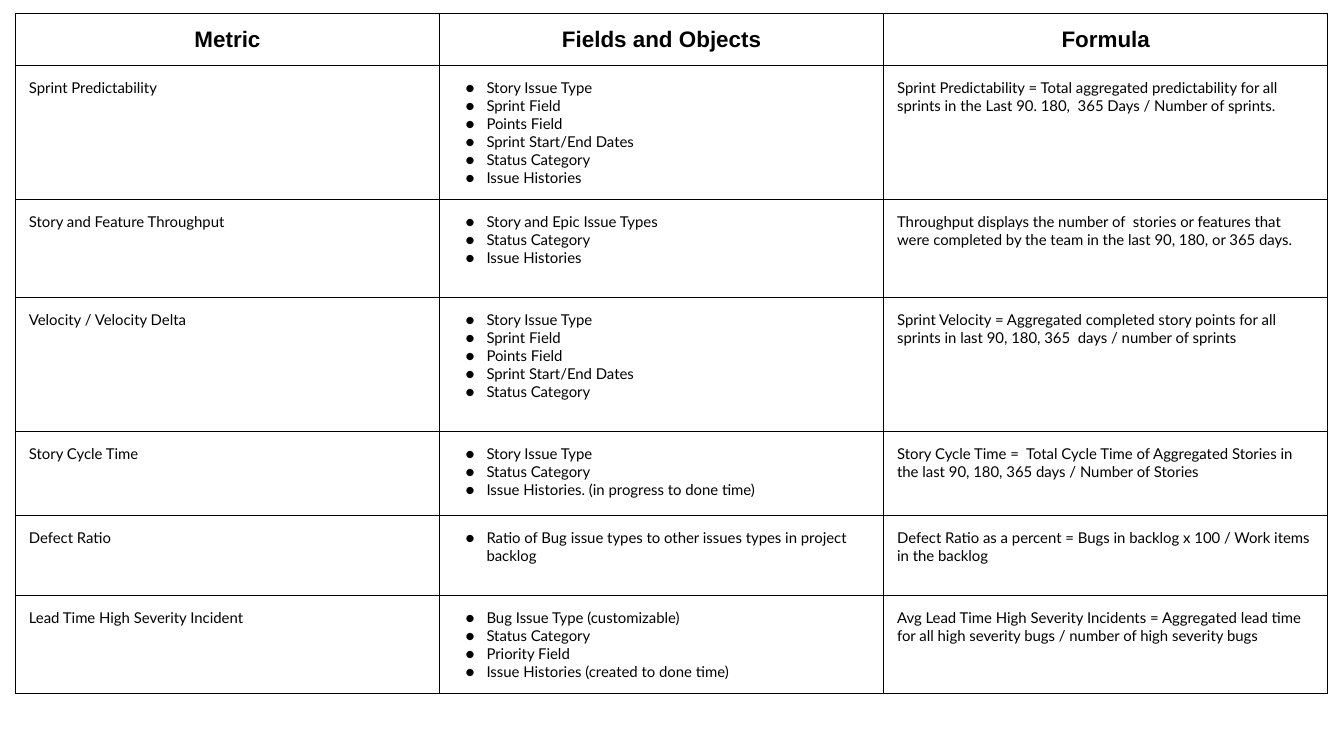
from pptx import Presentation
from pptx.dml.color import RGBColor
from pptx.enum.text import PP_ALIGN
from pptx.oxml.ns import qn
from pptx.util import Inches, Pt
from lxml import etree

CENTER, LEFT = PP_ALIGN.CENTER, PP_ALIGN.LEFT
BLACK, WHITE = "000000", "FFFFFF"
HEADER_FORMAT = {"name": "Arial", "size": Pt(24), "bold": True}
BODY_FORMAT = {"name": "Lato", "size": Pt(16), "bold": False}
MARGINS = ("margin_left", "margin_right", "margin_top", "margin_bottom")
BORDERS = ("a:lnL", "a:lnR", "a:lnT", "a:lnB")

COLUMN_WIDTHS = (6.31, 6.61, 6.61)
ROW_HEIGHTS = (0.78, 1.99, 1.46, 1.99, 1.25, 1.19, 1.46)
FIELDS_COLUMN = 1

# Each line of a cell in the fields column becomes a bullet.
ROWS = [
    ("Metric", "Fields and Objects", "Formula"),
    ("Sprint Predictability",
     "Story Issue Type\nSprint Field\nPoints Field\nSprint Start/End Dates\n"
     "Status Category\nIssue Histories",
     "Sprint Predictability = Total aggregated predictability for all sprints "
     "in the Last 90. 180,  365 Days / Number of sprints."),
    ("Story and Feature Throughput",
     "Story and Epic Issue Types\nStatus Category\nIssue Histories",
     "Throughput displays the number of  stories or features that were "
     "completed by the team in the last 90, 180, or 365 days."),
    ("Velocity / Velocity Delta",
     "Story Issue Type\nSprint Field\nPoints Field\nSprint Start/End Dates\n"
     "Status Category",
     "Sprint Velocity = Aggregated completed story points for all sprints "
     "in last 90, 180, 365  days / number of sprints"),
    ("Story Cycle Time",
     "Story Issue Type\nStatus Category\n"
     "Issue Histories. (in progress to done time)",
     "Story Cycle Time =  Total Cycle Time of Aggregated Stories in the last "
     "90, 180, 365 days / Number of Stories"),
    ("Defect Ratio",
     "Ratio of Bug issue types to other issues types in project backlog",
     "Defect Ratio as a percent = Bugs in backlog x 100 / Work items in the "
     "backlog"),
    ("Lead Time High Severity Incident",
     "Bug Issue Type (customizable)\nStatus Category\nPriority Field\n"
     "Issue Histories (created to done time)",
     "Avg Lead Time High Severity Incidents = Aggregated lead time for all "
     "high severity bugs / number of high severity bugs"),
]


def color(value):
    return RGBColor.from_string(value)


def add_solid_fill(parent, value):
    fill = etree.SubElement(parent, qn("a:solidFill"))
    etree.SubElement(fill, qn("a:srgbClr"), val=value)


deck = Presentation()
deck.slide_width, deck.slide_height = Inches(20), Inches(11.25)
page = deck.slides.add_slide(deck.slide_layouts[6])

table = page.shapes.add_table(
    len(ROWS), len(COLUMN_WIDTHS), Inches(0.23), Inches(0.2),
    Inches(sum(COLUMN_WIDTHS)), Inches(sum(ROW_HEIGHTS))).table
table.horz_banding = False
for column, width in zip(table.columns, COLUMN_WIDTHS):
    column.width = Inches(width)
for row, height in zip(table.rows, ROW_HEIGHTS):
    row.height = Inches(height)

for row_index, texts in enumerate(ROWS):
    is_header = row_index == 0
    for column_index, text in enumerate(texts):
        cell = table.cell(row_index, column_index)
        for margin in MARGINS:
            setattr(cell, margin, Inches(0.2))
        cell_properties = cell._tc.get_or_add_tcPr()
        for border in BORDERS:
            line = etree.SubElement(cell_properties, qn(border), w=str(Pt(1)))
            add_solid_fill(line, BLACK)
        cell.fill.solid()
        cell.fill.fore_color.rgb = color(WHITE)

        cell.text_frame.text = text
        for para in cell.text_frame.paragraphs:
            para.alignment = CENTER if is_header else LEFT
            if column_index == FIELDS_COLUMN and not is_header:
                properties = para._p.get_or_add_pPr()
                properties.set("marL", str(Inches(0.5)))
                properties.set("indent", str(Inches(-0.31)))
                bullet_color = etree.SubElement(properties, qn("a:buClr"))
                etree.SubElement(bullet_color, qn("a:srgbClr"), val=BLACK)
                etree.SubElement(properties, qn("a:buFont"), typeface="Lato")
                etree.SubElement(properties, qn("a:buChar"), char="●")
            for span in para.runs:
                for name, value in (HEADER_FORMAT if is_header else BODY_FORMAT).items():
                    setattr(span.font, name, value)
                span.font.color.rgb = color(BLACK)

deck.save("out.pptx")
